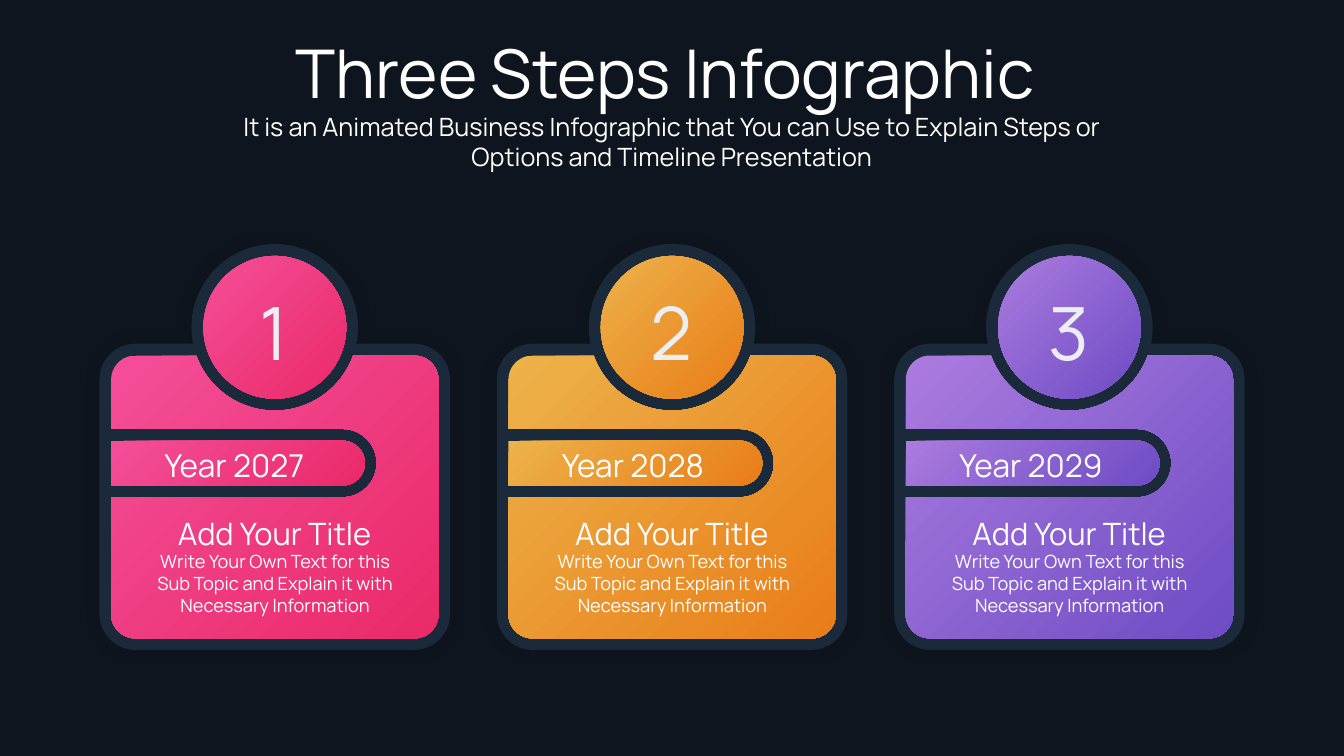
import math

from lxml import etree
from pptx import Presentation
from pptx.dml import color
from pptx.enum import shapes, text
from pptx.oxml import ns
from pptx.util import Pt

FONT = "Manrope"
WHITE = "FFFFFF"
CARD_LEFT, CARD_PITCH, CARD_W = 71.1, 283.8, 250.4
BADGE_X, BADGE_Y = CARD_W / 2, 233.8
RING_R, BADGE_R = 59.5, 51
PANEL_LEFT, PANEL_RIGHT = 8.3, 242.1
SLOT_X, SLOT_Y, SLOT_R, TAB_R = 173.6, 330.8, 24.4, 16
DETAILS = "Write Your Own Text for this\nSub Topic and Explain it with\nNecessary Information"
CARDS = [
    ("1", "Year 2027", "EA2A69", "F44E98"),
    ("2", "Year 2028", "E97D18", "EDB24A"),
    ("3", "Year 2029", "6E4CC4", "AB7BDF"),
]


def rgb(value):
    return color.RGBColor.from_string(value)


def add_node(parent, tag, **attrs):
    return etree.SubElement(parent, ns.qn(tag), {k: str(v) for k, v in attrs.items()})


def add_text(container, content, x, y, w, h, size, fill=WHITE,
             align=text.PP_ALIGN.CENTER, wrap=True):
    sp = container.add_textbox(Pt(x), Pt(y), Pt(w), Pt(h))
    tf = sp.text_frame
    tf.word_wrap = wrap
    tf.auto_size = text.MSO_AUTO_SIZE.SHAPE_TO_FIT_TEXT
    tf.text = content
    for p in tf.paragraphs:
        p.alignment = align
        for r in p.runs:
            r.font.size = Pt(size)
            r.font.name = FONT
            r.font.color.rgb = rgb(fill)


def arc(cx, cy, radius, start, end):
    inner = [a for a in range(-360, 721, 90) if min(start, end) < a < max(start, end)]
    stops = [start, *sorted(inner, reverse=end < start), end]
    spots = [(cx + radius * math.cos(math.radians(a)),
              cy + radius * math.sin(math.radians(a))) for a in stops]
    bends = [(radius, a, b - a) for a, b in zip(stops, stops[1:])]
    return [(x, y, bend) for (x, y), bend in zip(spots, [None, *bends])]


def add_outline(container, left, points):
    spots = [(Pt(left + x), Pt(y)) for x, y, _ in points]
    builder = container.build_freeform(*spots[0], scale=1.0)
    builder.add_line_segments(spots[1:], close=True)
    sp = builder.convert_to_shape()
    lines = list(sp.element.iter(ns.qn("a:lnTo")))
    for line, (_, _, bend) in zip(lines, points[1:]):
        if bend:
            radius, start, sweep = bend
            curve = add_node(line.getparent(), "a:arcTo", wR=Pt(radius), hR=Pt(radius),
                             stAng=round(start % 360 * 60000), swAng=round(sweep * 60000))
            line.getparent().replace(line, curve)
    return sp


def finish(sp):
    sp.line.fill.background()
    sp.shadow.inherit = False


def fill_solid(sp, value):
    finish(sp)
    sp.fill.solid()
    sp.fill.fore_color.rgb = rgb(value)


def fill_radial(sp, inner, outer):
    finish(sp)
    sp.fill.gradient()
    grad = sp.element.spPr.find(ns.qn("a:gradFill"))
    for child in list(grad):
        grad.remove(child)
    stops = add_node(grad, "a:gsLst")
    for pos, value in ((0, inner), (100000, outer)):
        add_node(add_node(stops, "a:gs", pos=pos), "a:srgbClr", val=value)
    circle = add_node(grad, "a:path", path="circle")
    add_node(circle, "a:fillToRect", l=100000, t=100000)
    add_node(grad, "a:tileRect", r=-100000, b=-100000)


def add_glow_shadow(sp):
    effects = sp.element.spPr.find(ns.qn("a:effectLst"))
    shadow = add_node(effects, "a:outerShdw", blurRad=Pt(12), dist=0, dir=0,
                      algn="ctr", rotWithShape=0)
    add_node(add_node(shadow, "a:srgbClr", val="000000"), "a:alpha", val=10000)


def corners(left, right, top, bottom, radius):
    l, r, t, b = left + radius, right - radius, top + radius, bottom - radius
    centres = [(r, t, 270), (r, b, 0), (l, b, 90), (l, t, 180)]
    return [arc(x, y, radius, start, start + 90) for x, y, start in centres]


def ring_dip(top):
    return math.degrees(math.asin((top - BADGE_Y) / RING_R))


def frame_points():
    top = 245.5
    dip = ring_dip(top)
    ring = arc(BADGE_X, BADGE_Y, RING_R, 180 - dip, 360 + dip)
    return ring + sum(corners(0, CARD_W, top, 464.2, 25.6), [])


def panel_points():
    top = 254
    dip = ring_dip(top)
    notch = arc(BADGE_X, BADGE_Y, RING_R, 180 - dip, dip)
    tr, br, bl, tl = corners(PANEL_LEFT, PANEL_RIGHT, top, 456, 17.2)
    return notch + tr + br + bl + slot_points(SLOT_R) + tl


def slot_points(radius):
    return [(PANEL_LEFT, SLOT_Y + radius, None), *arc(SLOT_X, SLOT_Y, radius, 90, -90),
            (PANEL_LEFT, SLOT_Y - radius, None)]


def add_card(slide, left, number, year, inner, outer):
    group = slide.shapes.add_group_shape().shapes
    frame = add_outline(group, left, frame_points())
    fill_solid(frame, "1B2A3A")
    add_glow_shadow(frame)
    panel = add_outline(group, left, panel_points())
    badge = group.add_shape(shapes.MSO_SHAPE.OVAL, Pt(left + BADGE_X - BADGE_R),
                            Pt(BADGE_Y - BADGE_R), Pt(2 * BADGE_R), Pt(2 * BADGE_R))
    tab = add_outline(group, left, slot_points(TAB_R))
    for sp in (panel, badge, tab):
        fill_radial(sp, inner, outer)
    add_text(group, year, left + 39.5, 314.8, 128, 34.6, 22.5,
             align=text.PP_ALIGN.LEFT, wrap=False)
    add_text(group, number, left + 88.8, 201.6, 72, 70.6, 52.5, fill="EBEEF2")
    add_text(group, "Add Your Title", left + 37.5, 364.3, 175, 33.8, 22, wrap=False)
    add_text(group, DETAILS, left + 25.2, 389.5, 200.2, 54.7, 13, wrap=False)


def main():
    prs = Presentation()
    prs.slide_width, prs.slide_height = Pt(960), Pt(540)
    slide = prs.slides.add_slide(prs.slide_layouts[6])
    slide.background.fill.solid()
    slide.background.fill.fore_color.rgb = rgb("0E151E")
    add_text(slide.shapes, "Three Steps Infographic ", 134.6, 18.7, 690.5, 65.5, 48)
    add_text(slide.shapes, "It is an Animated Business Infographic that You can Use to "
             "Explain Steps or Options and Timeline Presentation",
             134.6, 75.6, 690.5, 51.1, 18)
    for i, card in enumerate(CARDS):
        add_card(slide, CARD_LEFT + i * CARD_PITCH, *card)
    prs.save("out.pptx")


if __name__ == "__main__":
    main()
